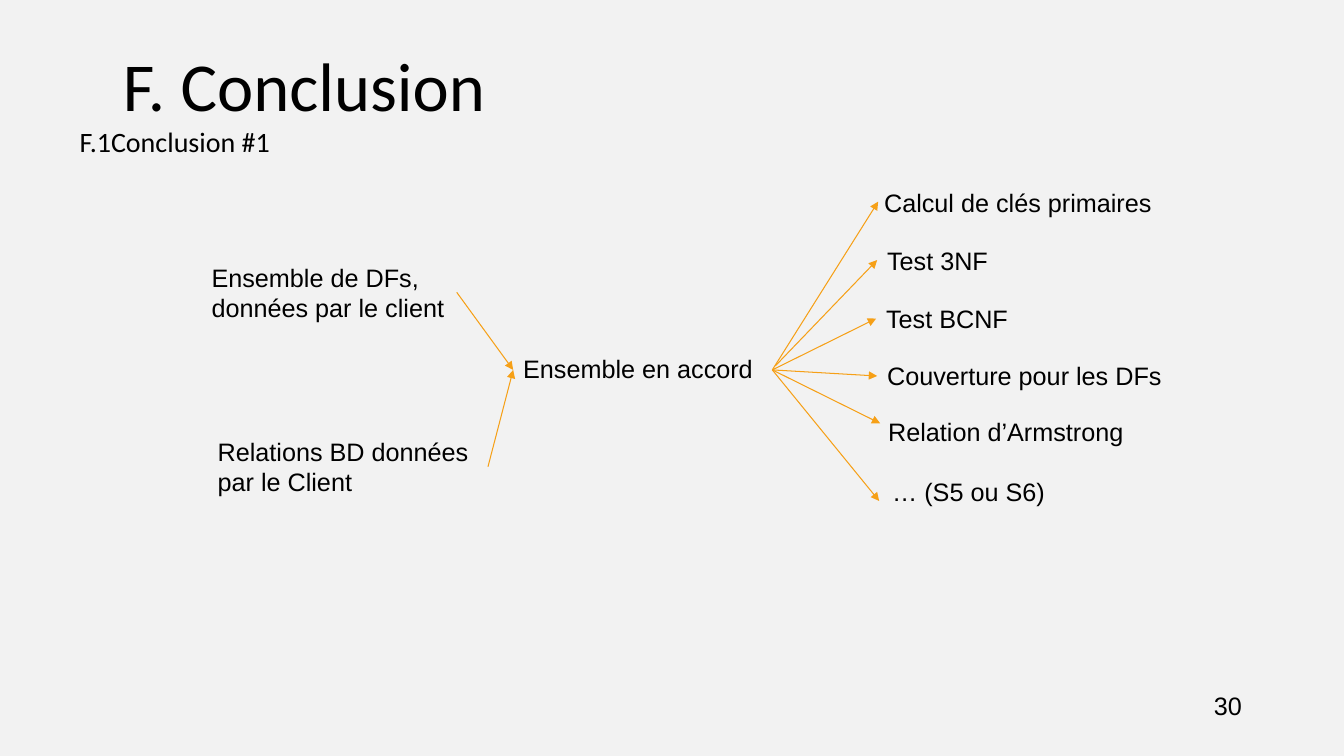
"""Build the conclusion slide: inputs lead to an agreed set, which feeds six results."""
import dataclasses

import pptx
import pptx.dml.color
import pptx.enum.shapes
import pptx.enum.text
import pptx.oxml
import pptx.oxml.ns
import pptx.util
from pptx.util import Inches


@dataclasses.dataclass(frozen=True)
class Theme:
    background: str = "F2F2F2"
    text: str = "000000"
    arrow: str = "F6A017"
    heading_font: str = "Calibri"
    body_font: str = "Arial"
    title_size: int = 49
    subtitle_size: int = 20
    body_size: int = 18
    arrow_width: float = 0.75


theme = Theme()


def add_text(text, left, top, width, height=0.4, size=theme.body_size, font=theme.body_font, wrap=True):
    """Add a left-aligned text box and return its text frame."""
    frame = slide.shapes.add_textbox(Inches(left), Inches(top), Inches(width), Inches(height)).text_frame
    frame.word_wrap = wrap
    frame.text = text
    for paragraph in frame.paragraphs:
        paragraph.font.size = pptx.util.Pt(size)
        paragraph.font.name = font
        paragraph.font.color.rgb = pptx.dml.color.RGBColor.from_string(theme.text)
    return frame


def add_arrow(start, end):
    """Add a thin arrow pointing at end."""
    arrow = slide.shapes.add_connector(
        pptx.enum.shapes.MSO_CONNECTOR.STRAIGHT, *map(Inches, start + end))
    arrow.line.color.rgb = pptx.dml.color.RGBColor.from_string(theme.arrow)
    arrow.line.width = pptx.util.Pt(theme.arrow_width)
    line = arrow.line._get_or_add_ln()
    line.append(pptx.oxml.parse_xml(f'<a:tailEnd {pptx.oxml.ns.nsdecls("a")} type="triangle"/>'))
    line.addnext(pptx.oxml.parse_xml(f'<a:effectLst {pptx.oxml.ns.nsdecls("a")}/>'))


presentation = pptx.Presentation()
presentation.slide_width = Inches(13.33)
presentation.slide_height = Inches(7.5)
slide = presentation.slides.add_slide(presentation.slide_layouts[6])
slide.background.fill.solid()
slide.background.fill.fore_color.rgb = pptx.dml.color.RGBColor.from_string(theme.background)

title = add_text("F. Conclusion", 1.12, 0.33, 11.06, 1, theme.title_size, theme.heading_font)
title.vertical_anchor = pptx.enum.text.MSO_ANCHOR.MIDDLE

subtitle = add_text("F.1Conclusion #1", 0.69, 1.19, 5.42, 0.44, theme.subtitle_size, theme.heading_font)
subtitle.paragraphs[0].space_before = pptx.util.Pt(10)

page_number = add_text("30", 12.02, 6.8, 0.53)
page_number.margin_left = page_number.margin_right = Inches(0.02)
page_number.vertical_anchor = pptx.enum.text.MSO_ANCHOR.MIDDLE

agreed_set_entry = (5.09, 3.67)
agreed_set_exit = (7.66, 3.67)
add_text("Ensemble en accord", 5.09, 3.46, 2.57, wrap=False)

inputs = [
    ("Ensemble de DFs, \vdonnées par le client", 2, 2.55, 2.53),
    ("Relations BD données \vpar le Client", 2.06, 4.28, 2.78),
]
for text, left, top, width in inputs:
    add_text(text, left, top, width, 0.71, wrap=False)
    add_arrow((left + width, top + 0.35), agreed_set_entry)

results = [
    ("Calcul de clés primaires", 8.67, 1.81, agreed_set_exit, (8.71, 2)),
    ("Test 3NF", 8.7, 2.38, (7.69, 3.63), (8.7, 2.58)),
    ("Test BCNF", 8.69, 2.96, agreed_set_exit, (8.69, 3.16)),
    ("Couverture pour les DFs", 8.7, 3.53, agreed_set_exit, (8.7, 3.73)),
    ("Relation d’Armstrong", 8.71, 4.08, agreed_set_exit, (8.73, 4.2)),
    ("… (S5 ou S6)", 8.75, 4.68, agreed_set_exit, (8.72, 4.97)),
]
for text, left, top, start, end in results:
    add_text(text, left, top, 3.22)
    add_arrow(start, end)

presentation.save("out.pptx")
